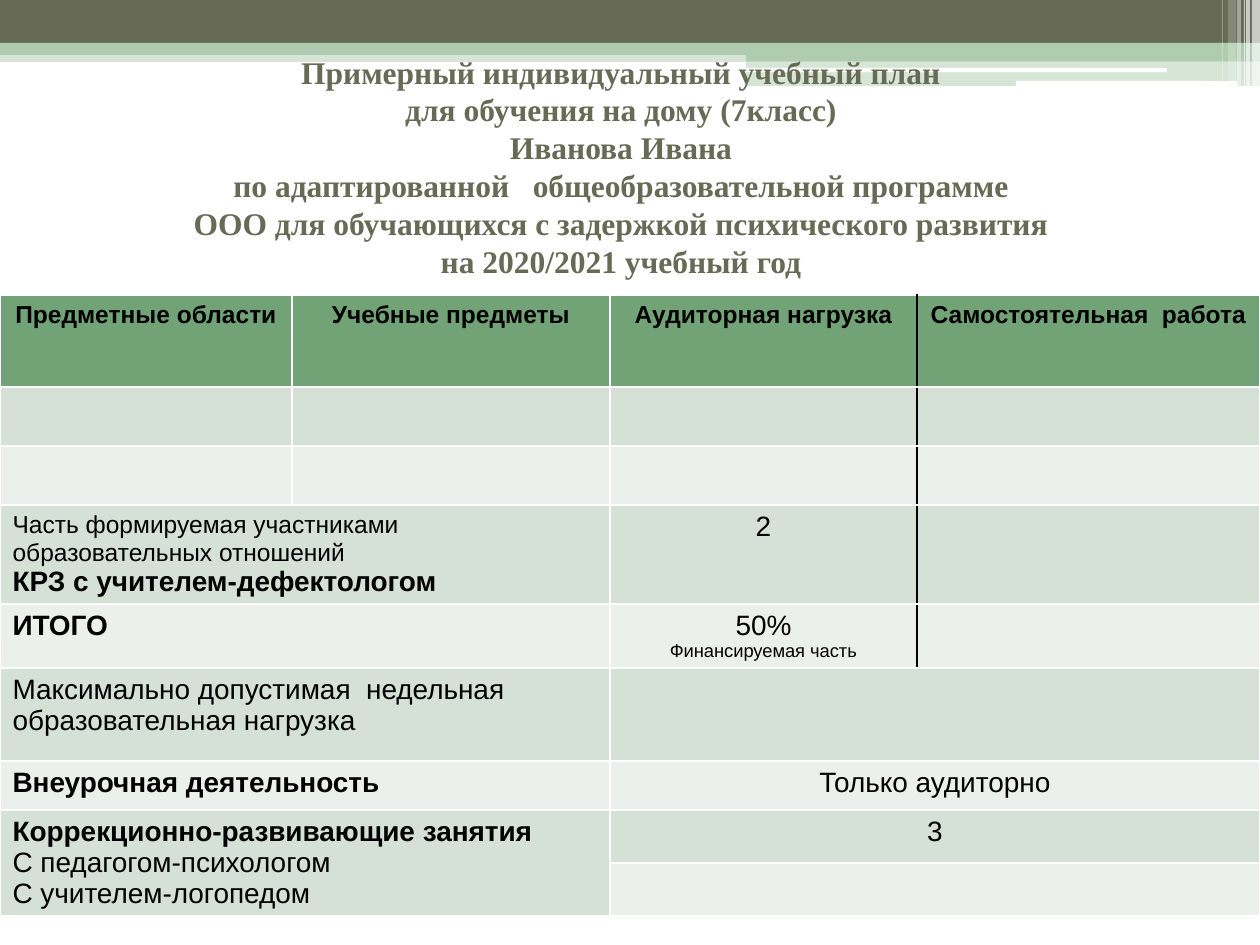
from lxml import etree
from pptx import Presentation
from pptx.dml.color import RGBColor
from pptx.enum.shapes import MSO_SHAPE
from pptx.enum.text import MSO_ANCHOR, PP_ALIGN
from pptx.oxml.ns import qn
from pptx.util import Pt

PX = 914400 // 126
RECT, ROUND = MSO_SHAPE.RECTANGLE, MSO_SHAPE.ROUNDED_RECTANGLE
CENTER, LEFT = PP_ALIGN.CENTER, PP_ALIGN.LEFT
MIDDLE = MSO_ANCHOR.MIDDLE
OLIVE, SAGE, WHITE, BLACK = "676A55", "B0CCB0", "FFFFFF", "000000"
HEAD, DARK, PALE = "72A376", "D5E0D6", "EBF0EC"

# left, top, width, height, colour, opacity in percent
BANDS = [
    (0, 50, 1260, 12, SAGE, 50),
    (0, 0, 1260, 43, OLIVE, 100),
    (0, 43, 1260, 12, SAGE, 100),
    (746, 49, 514, 12, SAGE, 100),
    (746, 61, 514, 25, SAGE, 50),
]
PILLS = [(745, 68, 422, 4), (1016, 81, 221, 5)]
# left, width, height, opacity in percent
STRIPES = [(1252, 8, 86, 65), (1246, 4, 86, 65), (1244, 1, 86, 60),
           (1237, 4, 86, 40), (1228, 8, 81, 20), (1222, 1, 81, 30)]

TITLE = [
    "Примерный индивидуальный учебный план",
    "для обучения на дому (7класс)",
    "Иванова Ивана",
    "по адаптированной   общеобразовательной программе",
    "ООО для обучающихся с задержкой психического развития",
    "на 2020/2021 учебный год",
]

COLS = [292, 318, 307, 343]
ROWS = [92, 59, 59, 98, 64, 93, 49, 53, 53]
MERGES = [(3, 0, 3, 1), (4, 0, 4, 1), (5, 0, 5, 1), (5, 2, 5, 3),
          (6, 0, 6, 1), (6, 2, 6, 3), (7, 0, 8, 1), (7, 2, 7, 3), (8, 2, 8, 3)]
SPLIT = 5  # rows above this one keep the load columns apart
# (row, column): lines of (text, size, bold)
TEXTS = {
    (0, 0): [("Предметные области", 14, True)],
    (0, 1): [("Учебные предметы", 14, True)],
    (0, 2): [("Аудиторная нагрузка", 14, True)],
    (0, 3): [("Самостоятельная  работа", 14, True)],
    (3, 0): [("Часть формируемая участниками образовательных отношений", 14, False),
             ("КРЗ с учителем-дефектологом", 16, True)],
    (3, 2): [("2", 16, False)],
    (4, 0): [("ИТОГО", 16, True)],
    (4, 2): [("50%", 16, False), ("Финансируемая часть", 10.5, False)],
    (5, 0): [("Максимально допустимая  недельная образовательная нагрузка", 16, False)],
    (6, 0): [("Внеурочная деятельность", 16, True)],
    (6, 2): [("Только аудиторно", 16, False)],
    (7, 0): [("Коррекционно-развивающие занятия", 16, True),
             ("С педагогом-психологом", 16, False),
             ("С учителем-логопедом", 16, False)],
    (7, 2): [("3", 16, False)],
}


def color(code):
    return RGBColor.from_string(code)


def style(font, code, **values):
    for name, value in values.items():
        setattr(font, name, value)
    font.color.rgb = color(code)


def box(slide, kind, left, top, width, height, code, alpha=100):
    shape = slide.shapes.add_shape(
        kind, left * PX, top * PX, width * PX, height * PX)
    shape.shadow.inherit = False
    shape.line.fill.background()
    shape.fill.solid()
    shape.fill.fore_color.rgb = color(code)
    if alpha < 100:
        tint = shape.element.spPr.find(qn("a:solidFill"))[0]
        etree.SubElement(tint, qn("a:alpha"), val=str(alpha * 1000))


def add_bands(slide):
    for band in BANDS:
        box(slide, RECT, *band)
    for pill in PILLS:
        box(slide, ROUND, *pill, WHITE)
    for left, width, height, alpha in STRIPES:
        box(slide, RECT, left, 0, width, height, WHITE, alpha)


def add_title(slide):
    title = slide.shapes.title
    place = dict(left=54, top=65, width=1134, height=240)
    for name, value in place.items():
        setattr(title, name, value * PX)
    frame = title.text_frame
    frame.text = "\v".join(TITLE)
    frame.word_wrap = True
    frame.vertical_anchor = MIDDLE
    frame.margin_top, frame.margin_bottom = 0, 38 * PX
    para = frame.paragraphs[0]
    para.alignment = CENTER
    for run in para.runs:
        style(run.font, OLIVE, name="Times New Roman", size=Pt(18), bold=True)
    # The placeholder comes first by default; bring it above the bands.
    slide.shapes.element.append(title.element)


def edge(cell, side):
    """Draw a thin black line on one side (lnL or lnR) of a cell."""
    line = etree.Element(qn("a:" + side), w=str(Pt(1)))
    fill = etree.SubElement(line, qn("a:solidFill"))
    etree.SubElement(fill, qn("a:srgbClr"), val=BLACK)
    cell._tc.get_or_add_tcPr().insert(0, line)


def write(cell, lines, align):
    frame = cell.text_frame
    for i, (text, size, bold) in enumerate(lines):
        para = frame.add_paragraph() if i else frame.paragraphs[0]
        para.alignment = align
        run = para.add_run()
        run.text = text
        style(run.font, BLACK, name="Arial", size=Pt(size), bold=bold)


def add_plan(slide):
    table = slide.shapes.add_table(
        len(ROWS), len(COLS), 0, 295 * PX, sum(COLS) * PX, sum(ROWS) * PX).table
    for col, width in zip(table.columns, COLS):
        col.width = width * PX
    for r, height in enumerate(ROWS):
        table.rows[r].height = height * PX
        for c in range(len(COLS)):
            cell = table.cell(r, c)
            cell.fill.solid()
            cell.fill.fore_color.rgb = color(
                HEAD if r == 0 else DARK if r % 2 else PALE)
        if r < SPLIT:
            edge(table.cell(r, 2), "lnR")
            edge(table.cell(r, 3), "lnL")
    for top, left, bottom, right in MERGES:
        table.cell(top, left).merge(table.cell(bottom, right))
    for (r, c), lines in TEXTS.items():
        write(table.cell(r, c), lines, CENTER if r == 0 or c > 1 else LEFT)


def main():
    deck = Presentation()
    deck.slide_width, deck.slide_height = 1260 * PX, 945 * PX
    slide = deck.slides.add_slide(deck.slide_layouts[5])
    add_bands(slide)
    add_title(slide)
    add_plan(slide)
    deck.save("out.pptx")


if __name__ == "__main__":
    main()
